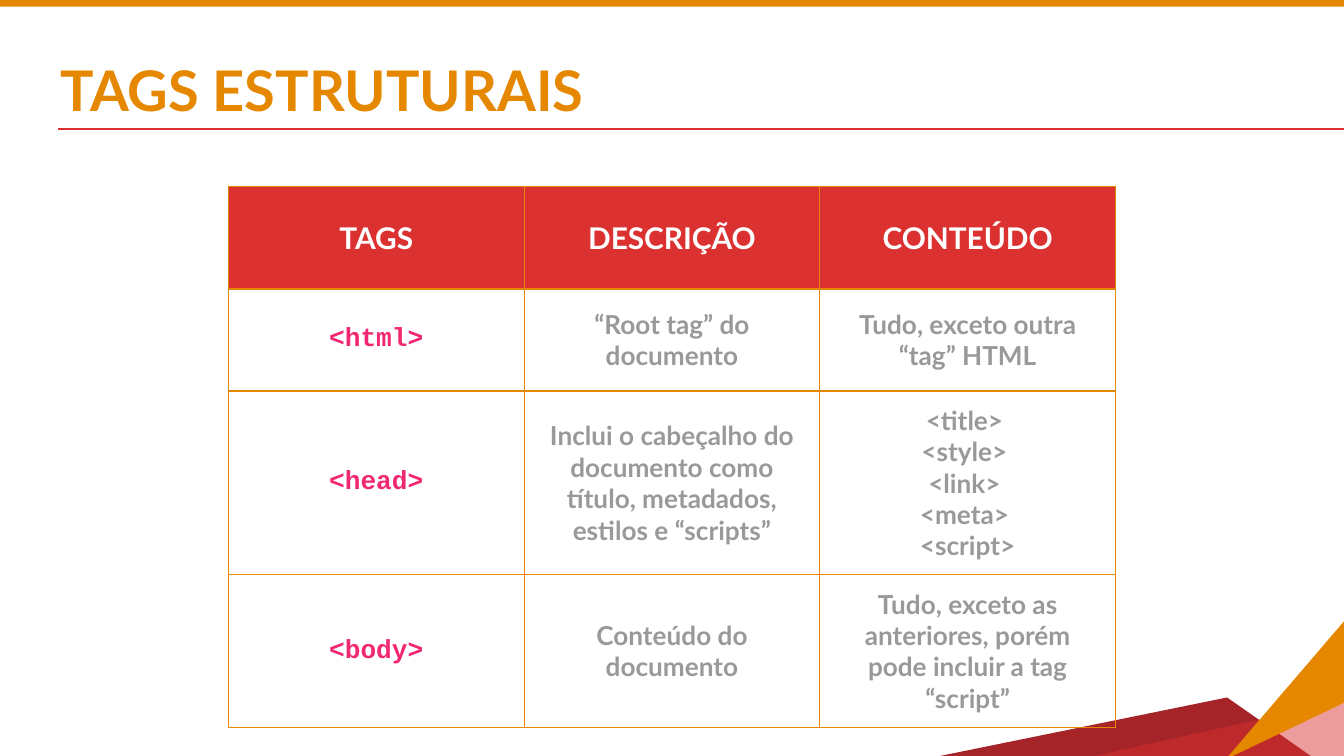
from lxml import etree
from pptx import Presentation
from pptx import util as u
from pptx.dml.color import RGBColor
from pptx.enum import shapes, text
from pptx.oxml.ns import qn

WIDTH = 10
HEIGHT = WIDTH * 9 / 16
COLORS = {
    "orange": "E68700", "red": "DB3231", "dark_red": "A42428",
    "pink": "F22772", "gray": "999999", "white": "FFFFFF",
}
HEADINGS = ["TAGS", "DESCRIÇÃO", "CONTEÚDO"]
TAGS = [
    ("<html>", "“Root tag” do documento", "Tudo, exceto outra “tag” HTML"),
    ("<head>",
     "Inclui o cabeçalho do documento como título, metadados, estilos e “scripts”",
     "<title> \n<style> \n<link> \n<meta> \n<script>"),
    ("<body>", "Conteúdo do documento",
     "Tudo, exceto as anteriores, porém pode incluir a tag “script”"),
]
COLUMN, ROW = 2.2, 0.76


def rgb(name):
    return RGBColor.from_string(COLORS[name])


def write(frame, content, *, size, color, font="Lato", bold=True,
          align=text.PP_ALIGN.LEFT):
    frame.word_wrap = True
    frame.text = content
    for paragraph in frame.paragraphs:
        paragraph.alignment = align
        for run in paragraph.runs:
            run.font.name, run.font.size = font, u.Pt(size)
            run.font.bold, run.font.color.rgb = bold, rgb(color)


def paint(shape, color, opacity=100):
    shape.shadow.inherit = False
    shape.fill.solid()
    shape.fill.fore_color.rgb = rgb(color)
    shape.line.fill.background()
    if opacity < 100:
        tint = shape.fill._xPr.find(".//" + qn("a:srgbClr"))
        etree.SubElement(tint, qn("a:alpha"), val=str(opacity * 1000))


def add_triangle(slide, corners, color, opacity=100):
    # The builder rounds its points, so they are given in EMU
    start, *others = [(u.Inches(x), u.Inches(y)) for x, y in corners]
    builder = slide.shapes.build_freeform(*start)
    builder.add_line_segments(others, close=True)
    paint(builder.convert_to_shape(), color, opacity)


def add_rule(slide, left, right, y, color):
    rule = slide.shapes.add_connector(
        shapes.MSO_CONNECTOR.STRAIGHT,
        *(u.Inches(n) for n in (left, y, right, y)))
    rule.line.color.rgb, rule.line.width = rgb(color), u.Pt(0.75)
    etree.SubElement(rule._element.spPr, qn("a:effectLst"))


def add_borders(cell, color, width=0.75):
    properties = cell._tc.get_or_add_tcPr()
    for side in ("lnL", "lnR", "lnT", "lnB"):
        border = etree.SubElement(properties, qn("a:" + side), w=str(u.Pt(width)))
        fill = etree.SubElement(border, qn("a:solidFill"))
        etree.SubElement(fill, qn("a:srgbClr"), val=COLORS[color])


def format_cell(cell, content, row, column):
    add_borders(cell, "orange")
    cell.margin_left = cell.margin_right = u.Inches(0.1)
    cell.margin_top = cell.margin_bottom = u.Inches(0.1)
    cell.vertical_anchor = text.MSO_ANCHOR.MIDDLE
    if row == 0:
        cell.fill.solid()
        cell.fill.fore_color.rgb = rgb("red")
        style = dict(size=16, color="white")
    else:
        cell.fill.background()
        style = dict(size=14, color="gray")
        if column == 0:
            style.update(color="pink", font="Courier New")
    write(cell.text_frame, content, align=text.PP_ALIGN.CENTER, **style)


def add_tag_table(slide):
    rows = [HEADINGS, *TAGS]
    width, height = COLUMN * len(HEADINGS), ROW * len(rows)
    table = slide.shapes.add_table(
        len(rows), len(HEADINGS), u.Inches((WIDTH - width) / 2),
        u.Inches(1.39), u.Inches(width), u.Inches(height)).table
    table.horz_banding = False
    for r, contents in enumerate(rows):
        table.rows[r].height = u.Inches(ROW)
        for c, content in enumerate(contents):
            format_cell(table.cell(r, c), content, r, c)


def add_title(slide, content):
    title = slide.shapes.title
    title.left, title.top = u.Inches(0.35), u.Inches(0.31)
    title.width, title.height = u.Inches(8.31), u.Inches(0.97)
    frame = title.text_frame
    frame.auto_size = text.MSO_AUTO_SIZE.NONE
    frame.vertical_anchor = text.MSO_ANCHOR.TOP
    frame.margin_left = frame.margin_right = u.Inches(0.1)
    frame.margin_top = frame.margin_bottom = u.Inches(0.1)
    write(frame, content, size=30, color="orange")


def add_decoration(slide):
    # Corner triangles
    add_triangle(slide, [(6.97, 5.63), (9.76, 5.63), (9.13, 5.19)], "dark_red")
    add_triangle(slide, [(10.02, 5.21), (10.02, 5.65), (8.03, 5.65)], "red", 48)
    add_triangle(slide, [(10.02, 5.22), (10.02, 4.6), (9.12, 5.65)], "orange")
    # Top band and title rule
    band = slide.shapes.add_shape(
        shapes.MSO_SHAPE.RECTANGLE,
        *(u.Inches(n) for n in (-0.01, -0.06, WIDTH + 0.02, 0.11)))
    paint(band, "orange")
    add_rule(slide, 0.43, 10.05, 0.96, "red")


def main():
    deck = Presentation()
    deck.slide_width, deck.slide_height = u.Inches(WIDTH), u.Inches(HEIGHT)
    slide = deck.slides.add_slide(deck.slide_layouts.get_by_name("Title Only"))
    add_decoration(slide)
    add_title(slide, "TAGS ESTRUTURAIS")
    add_tag_table(slide)
    deck.save("out.pptx")


if __name__ == "__main__":
    main()
